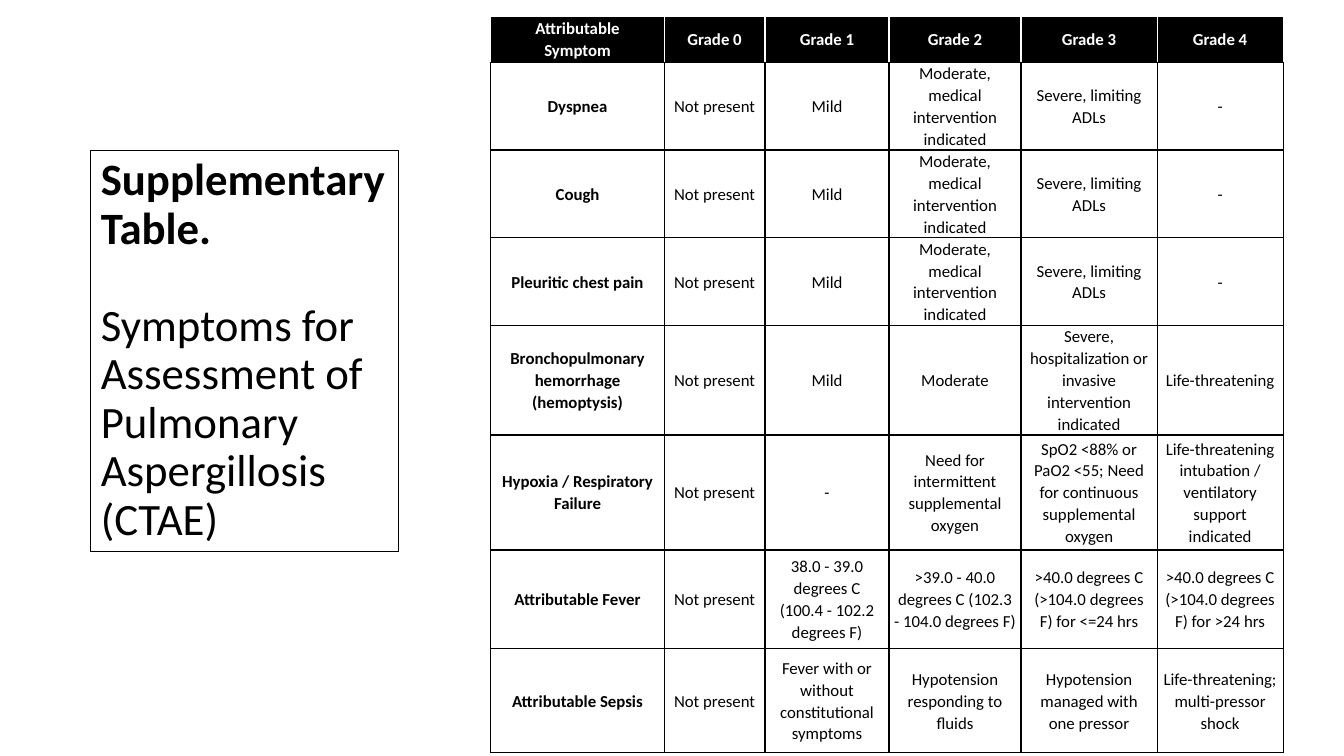
from pptx import Presentation
from pptx.dml.color import RGBColor
from pptx.enum.text import MSO_ANCHOR, MSO_AUTO_SIZE, PP_ALIGN
from pptx.oxml import parse_xml
from pptx.oxml.ns import nsdecls
from pptx.util import Pt

BLACK = RGBColor(0x00, 0x00, 0x00)
WHITE = RGBColor(0xFF, 0xFF, 0xFF)
FONT = "Calibri"
LEFT, CENTER = PP_ALIGN.LEFT, PP_ALIGN.CENTER
MIDDLE = MSO_ANCHOR.MIDDLE
NO_AUTOFIT = MSO_AUTO_SIZE.NONE

SLIDE_SIZE = (960, 540)
TITLE_BOX = (64.8, 107.3, 219.6, 286.6)
TABLE_BOX = (350.64, 11.5, 566.64, 520)
COLUMN_WIDTHS = (123.84, 72, 88.56, 94.32, 97.2, 90)
ROW_HEIGHTS = (33.1, 58.3, 58.3, 58.3, 74.2, 82.1, 70.6, 74.2)

HEADINGS = ("Attributable\nSymptom", *(f"Grade {grade}" for grade in range(5)))
MILD_TO_SEVERE = ("Mild", "Moderate, medical intervention indicated", "Severe, limiting ADLs", "-")
SYMPTOMS = {
    "Dyspnea": MILD_TO_SEVERE,
    "Cough": MILD_TO_SEVERE,
    "Pleuritic chest pain": MILD_TO_SEVERE,
    "Bronchopulmonary hemorrhage (hemoptysis)": (
        "Mild",
        "Moderate",
        "Severe, hospitalization or invasive intervention indicated",
        "Life-threatening",
    ),
    "Hypoxia / Respiratory Failure": (
        "-",
        "Need for intermittent supplemental oxygen",
        "SpO2 <88% or PaO2 <55; Need for continuous supplemental oxygen",
        "Life-threatening intubation / ventilatory support indicated",
    ),
    "Attributable Fever": (
        "38.0 - 39.0 degrees C (100.4 - 102.2 degrees F)",
        ">39.0 - 40.0 degrees C (102.3 - 104.0 degrees F)",
        ">40.0 degrees C (>104.0 degrees F) for <=24 hrs",
        ">40.0 degrees C (>104.0 degrees F) for >24 hrs",
    ),
    "Attributable Sepsis": (
        "Fever with or without constitutional symptoms",
        "Hypotension responding to fluids",
        "Hypotension managed with one pressor",
        "Life-threatening; multi-pressor shock",
    ),
}


def write_paragraph(paragraph, text, *, size, color=BLACK, bold=False, align=LEFT, spacing=1.0, before=0):
    """Fill one paragraph with formatted text."""
    paragraph.alignment = align
    paragraph.line_spacing = spacing
    paragraph.space_before = Pt(before)
    run = paragraph.add_run()
    run.text = text
    run.font.name = FONT
    run.font.size = Pt(size)
    run.font.bold = bold
    run.font.color.rgb = color


def add_title(slide, box):
    """Place the outlined title in the given box."""
    title = slide.shapes.title
    title.left, title.top, title.width, title.height = map(Pt, box)
    title.line.color.rgb = BLACK
    title.line.width = Pt(0.75)
    frame = title.text_frame
    frame.word_wrap = True
    frame.auto_size = NO_AUTOFIT
    frame.vertical_anchor = MIDDLE
    write_paragraph(frame.paragraphs[0], "Supplementary Table.", size=32, bold=True, spacing=0.9)
    write_paragraph(
        frame.add_paragraph(),
        "Symptoms for Assessment of Pulmonary Aspergillosis (CTAE)",
        size=32,
        spacing=0.9,
        before=35,
    )


def set_borders(cell, side_color, bottom_color):
    """Draw one-point borders around a cell."""
    properties = cell._tc.get_or_add_tcPr()
    for side in "LRTB":
        color = bottom_color if side == "B" else side_color
        properties.append(parse_xml(
            f'<a:ln{side} {nsdecls("a")} w="{Pt(1)}"><a:solidFill>'
            f'<a:srgbClr val="{color}"/></a:solidFill></a:ln{side}>'
        ))


def format_cell(cell, text, is_header, is_bold):
    """Fill and format one table cell."""
    set_borders(cell, WHITE if is_header else BLACK, BLACK)
    cell.fill.solid()
    cell.fill.fore_color.rgb = BLACK if is_header else WHITE
    cell.vertical_anchor = MIDDLE
    cell.margin_left = cell.margin_right = Pt(3.6)
    cell.margin_top = cell.margin_bottom = Pt(0)
    frame = cell.text_frame
    for index, line in enumerate(text.split("\n")):
        paragraph = frame.add_paragraph() if index else frame.paragraphs[0]
        write_paragraph(
            paragraph,
            line,
            size=12,
            color=WHITE if is_header else BLACK,
            bold=is_bold,
            align=CENTER,
            spacing=1.07,
        )


def add_symptom_table(slide, box):
    """Place the table of symptom grades in the given box."""
    rows = [HEADINGS] + [(symptom, "Not present", *grades) for symptom, grades in SYMPTOMS.items()]
    table = slide.shapes.add_table(len(rows), len(HEADINGS), *map(Pt, box)).table
    for column, width in zip(table.columns, COLUMN_WIDTHS):
        column.width = Pt(width)
    for row, height in zip(table.rows, ROW_HEIGHTS):
        row.height = Pt(height)
    for row_index, texts in enumerate(rows):
        for column_index, text in enumerate(texts):
            is_header = row_index == 0
            format_cell(table.cell(row_index, column_index), text, is_header, is_header or column_index == 0)


def main():
    """Build and save the presentation."""
    presentation = Presentation()
    presentation.slide_width, presentation.slide_height = map(Pt, SLIDE_SIZE)
    slide = presentation.slides.add_slide(presentation.slide_layouts.get_by_name("Title Only"))
    add_title(slide, TITLE_BOX)
    add_symptom_table(slide, TABLE_BOX)
    presentation.save("out.pptx")


if __name__ == "__main__":
    main()
